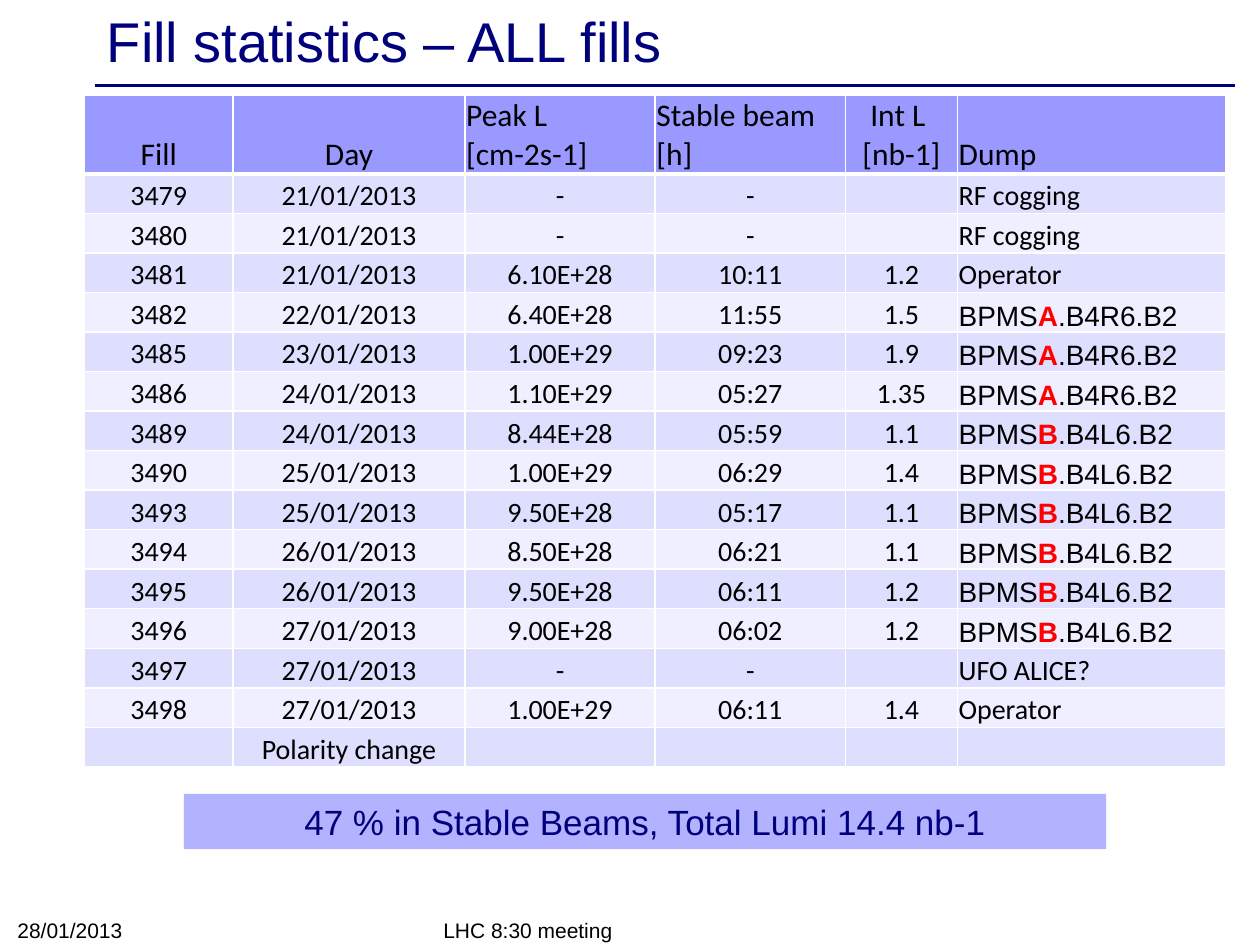
import lxml.etree
import pptx
import pptx.dml.color
import pptx.enum.shapes
import pptx.enum.text
import pptx.oxml.ns
import pptx.util
from dataclasses import dataclass

Inches = pptx.util.Inches
Pt = pptx.util.Pt
Align = pptx.enum.text.PP_ALIGN
Anchor = pptx.enum.text.MSO_ANCHOR
qn = pptx.oxml.ns.qn


@dataclass(frozen=True)
class Theme:
    navy: str = "00007D"
    black: str = "000000"
    white: str = "FFFFFF"
    red: str = "FF0000"
    head: str = "9999FF"
    odd: str = "DEDEFF"
    even: str = "EFEFFF"
    banner: str = "B2B2FF"
    title: int = 32
    total: int = 20
    label: int = 18
    body: int = 16
    small: int = 12
    sans: str = "Arial"
    grid: str = "Calibri"


theme = Theme()
rgb = pptx.dml.color.RGBColor.from_string


def write(frame, text, size=theme.body, font=theme.sans, color=theme.black,
          align=Align.LEFT, anchor=Anchor.BOTTOM):
    frame.word_wrap = True
    frame.vertical_anchor = anchor
    para = frame.paragraphs[0]
    para.alignment = align
    for row, line in enumerate(text.split("\n")):
        if row:
            para.add_line_break()
        for part, words in enumerate(line.split("*")):
            if not words:
                continue
            mark = part % 2 == 1
            run = para.add_run()
            run.text = words
            run.font.size = Pt(size)
            run.font.name = font
            run.font.bold = mark
            run.font.color.rgb = rgb(theme.red if mark else color)


deck = pptx.Presentation()
deck.slide_width, deck.slide_height = Inches(10), Inches(7.5)
slide = deck.slides.add_slide(deck.slide_layouts[6])
shapes = slide.shapes

rule = shapes.add_connector(pptx.enum.shapes.MSO_CONNECTOR.STRAIGHT,
                            Inches(0.75), Inches(0.68), Inches(9.8), Inches(0.68))
rule.line.color.rgb = rgb(theme.navy)
rule.line.width = Pt(2)
lxml.etree.SubElement(rule.line._get_or_add_ln().getparent(), qn("a:effectLst"))

labels = [
    ("Fill statistics – ALL fills", (0.75, 0.03, 9, 0.57), theme.title, theme.navy, Anchor.MIDDLE),
    ("LHC 8:30 meeting", (3.42, 7.25, 3.17, 0.28), theme.small, theme.black, Anchor.BOTTOM),
    ("28/01/2013", (0.04, 7.24, 2.33, 0.29), theme.small, theme.black, Anchor.BOTTOM),
]
for text, place, size, color, anchor in labels:
    box = shapes.add_textbox(*map(Inches, place))
    write(box.text_frame, text, size=size, color=color, anchor=anchor)

right, left = "BPMS*A*.B4R6.B2", "BPMS*B*.B4L6.B2"
fills = [
    ("Fill", "Day", "Peak L\n[cm-2s-1]", "Stable beam [h]", "Int L \n[nb-1]", "Dump"),
    ("3479", "21/01/2013", "-", "-", "", "RF cogging"),
    ("3480", "21/01/2013", "-", "-", "", "RF cogging"),
    ("3481", "21/01/2013", "6.10E+28", "10:11", "1.2", "Operator"),
    ("3482", "22/01/2013", "6.40E+28", "11:55", "1.5", right),
    ("3485", "23/01/2013", "1.00E+29", "09:23", "1.9", right),
    ("3486", "24/01/2013", "1.10E+29", "05:27", "1.35", right),
    ("3489", "24/01/2013", "8.44E+28", "05:59", "1.1", left),
    ("3490", "25/01/2013", "1.00E+29", "06:29", "1.4", left),
    ("3493", "25/01/2013", "9.50E+28", "05:17", "1.1", left),
    ("3494", "26/01/2013", "8.50E+28", "06:21", "1.1", left),
    ("3495", "26/01/2013", "9.50E+28", "06:11", "1.2", left),
    ("3496", "27/01/2013", "9.00E+28", "06:02", "1.2", left),
    ("3497", "27/01/2013", "-", "-", "", "UFO ALICE?"),
    ("3498", "27/01/2013", "1.00E+29", "06:11", "1.4", "Operator"),
    ("", "Polarity change", "", "", "", ""),
]
widths = [1.18, 1.84, 1.51, 1.51, 0.89, 2.13]
high, top = 5.33, 0.62
table = shapes.add_table(len(fills), len(widths), Inches(0.67), Inches(0.76),
                         Inches(sum(widths)), Inches(high)).table
table.first_row = table.horz_banding = False
for column, width in zip(table.columns, widths):
    column.width = Inches(width)

for r, values in enumerate(fills):
    table.rows[r].height = Inches(top if r == 0 else (high - top) / (len(fills) - 1))
    shade = theme.head if r == 0 else theme.odd if r % 2 else theme.even
    for c, text in enumerate(values):
        cell = table.cell(r, c)
        cell.margin_left = cell.margin_right = cell.margin_top = Inches(0.01)
        cell.margin_bottom = 0
        cell.vertical_anchor = Anchor.BOTTOM
        props = cell._tc.get_or_add_tcPr()
        for side in "LRTB":
            thick = (r, side) in ((0, "B"), (1, "T"))
            edge = lxml.etree.SubElement(props, qn("a:ln" + side), w=str(Pt(3 if thick else 1)))
            paint = lxml.etree.SubElement(edge, qn("a:solidFill"))
            lxml.etree.SubElement(paint, qn("a:srgbClr"), val=theme.white)
        cell.fill.solid()
        cell.fill.fore_color.rgb = rgb(shade)
        if not text:
            end = cell.text_frame.paragraphs[0]._p
            lxml.etree.SubElement(end, qn("a:endParaRPr"), sz=str(theme.body * 100))
            continue
        plain = c == 5 or (r == 0 and c in (2, 3))
        write(cell.text_frame, text, size=theme.body if r else theme.label,
              font=theme.sans if "*" in text else theme.grid,
              align=Align.LEFT if plain else Align.CENTER)

total = shapes.add_shape(pptx.enum.shapes.MSO_SHAPE.RECTANGLE,
                         Inches(1.46), Inches(6.3), Inches(7.32), Inches(0.44))
total.shadow.inherit = False
total.fill.solid()
total.fill.fore_color.rgb = rgb(theme.banner)
total.line.fill.background()
write(total.text_frame, "47 % in Stable Beams, Total Lumi 14.4 nb-1", size=theme.total,
      color=theme.navy, align=Align.CENTER, anchor=Anchor.MIDDLE)

deck.save("out.pptx")
